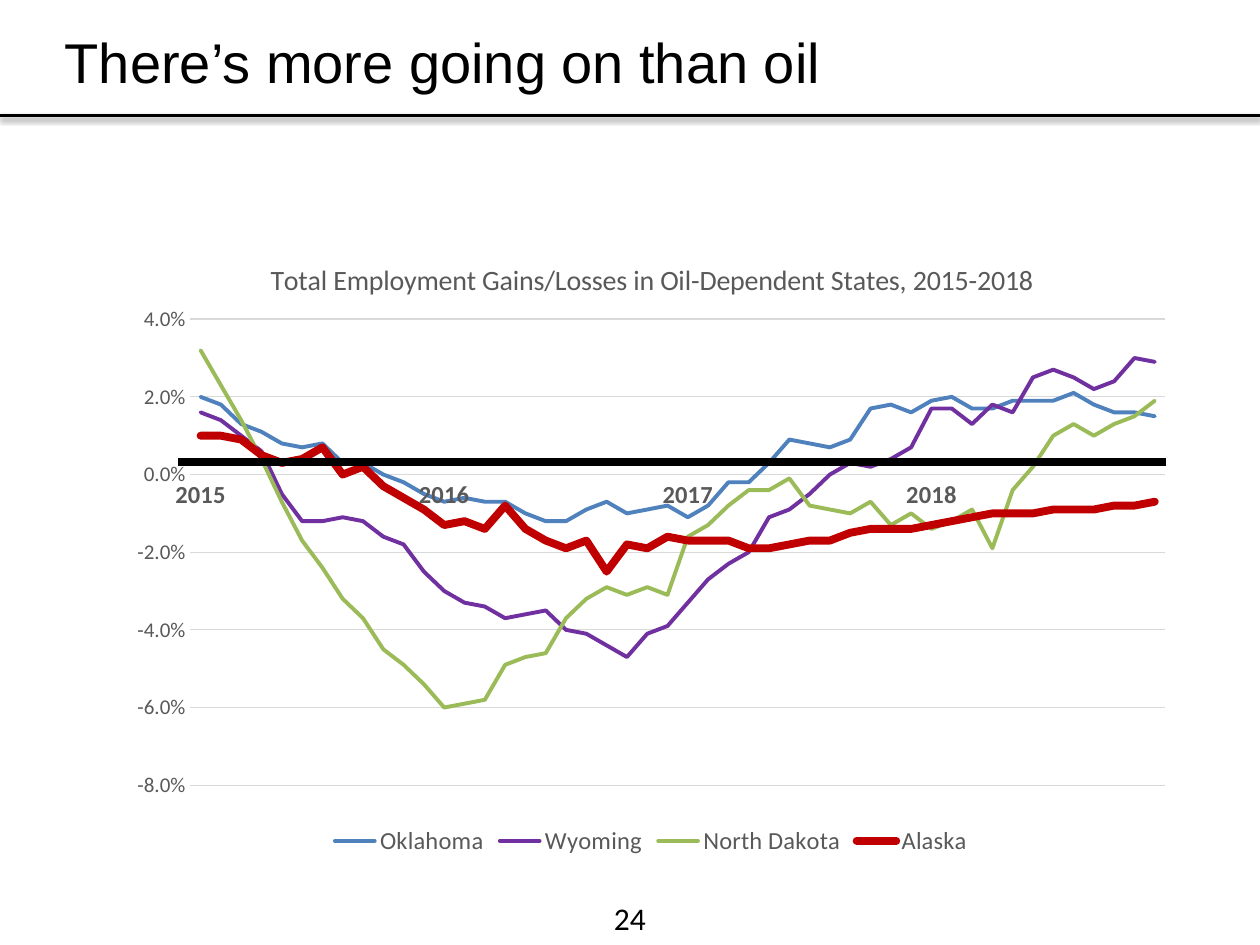
from dataclasses import dataclass

import lxml.etree
import pptx
import pptx.chart.data
import pptx.dml.color
import pptx.enum.chart
import pptx.enum.shapes
import pptx.enum.text
import pptx.oxml
import pptx.oxml.ns
import pptx.util

Pt = pptx.util.Pt
RGB = pptx.dml.color.RGBColor.from_string
qn = pptx.oxml.ns.qn


@dataclass(frozen=True)
class Theme:
    ink: str = "000000"
    label: str = "595959"
    grid: str = "D9D9D9"
    heading_font: str = "Arial"
    font: str = "Calibri"
    heading: float = 32
    page: float = 18
    chart_title: float = 16
    category: float = 14
    value: float = 12
    legend: float = 14


@dataclass(frozen=True)
class State:
    name: str
    color: str
    width: float
    tenths: list[int]  # tenths of a percent, by month


T = Theme()
YEARS = range(2015, 2019)
STATES = [
    State("Oklahoma", "4F81BD", 2.25, [
        20, 18, 13, 11, 8, 7, 8, 3, 3, 0, -2, -5,
        -7, -6, -7, -7, -10, -12, -12, -9, -7, -10, -9, -8,
        -11, -8, -2, -2, 3, 9, 8, 7, 9, 17, 18, 16,
        19, 20, 17, 17, 19, 19, 19, 21, 18, 16, 16, 15]),
    State("Wyoming", "7030A0", 2.25, [
        16, 14, 10, 6, -5, -12, -12, -11, -12, -16, -18, -25,
        -30, -33, -34, -37, -36, -35, -40, -41, -44, -47, -41, -39,
        -33, -27, -23, -20, -11, -9, -5, 0, 3, 2, 4, 7,
        17, 17, 13, 18, 16, 25, 27, 25, 22, 24, 30, 29]),
    State("North Dakota", "9BBB59", 2.25, [
        32, 23, 14, 4, -7, -17, -24, -32, -37, -45, -49, -54,
        -60, -59, -58, -49, -47, -46, -37, -32, -29, -31, -29, -31,
        -16, -13, -8, -4, -4, -1, -8, -9, -10, -7, -13, -10,
        -14, -12, -9, -19, -4, 2, 10, 13, 10, 13, 15, 19]),
    State("Alaska", "C00000", 4.5, [
        10, 10, 9, 5, 3, 4, 7, 0, 2, -3, -6, -9,
        -13, -12, -14, -8, -14, -17, -19, -17, -25, -18, -19, -16,
        -17, -17, -17, -19, -19, -18, -17, -17, -15, -14, -14, -14,
        -13, -12, -11, -10, -10, -10, -9, -9, -9, -8, -8, -7]),
]


def style_font(font, size: float, color: str, name: str = T.font, bold: bool = False) -> None:
    font.size, font.name, font.bold = Pt(size), name, bold
    font.color.rgb = RGB(color)


def add_text(s, text: str, *, x: float, y: float, w: float, h: float, size: float,
             font: str = T.font, color: str = T.ink,
             align=pptx.enum.text.PP_ALIGN.LEFT) -> None:
    tf = s.shapes.add_textbox(Pt(x), Pt(y), Pt(w), Pt(h)).text_frame
    tf.word_wrap = True
    p = tf.paragraphs[0]
    p.alignment = align
    r = p.add_run()
    r.text = text
    style_font(r.font, size, color, font)


def add_rule(s, x1: float, x2: float, y: float, width: float, shadow: bool = False) -> None:
    line = s.shapes.add_connector(pptx.enum.shapes.MSO_CONNECTOR.STRAIGHT,
                                  Pt(x1), Pt(y), Pt(x2), Pt(y))
    line.line.color.rgb = RGB(T.ink)
    line.line.width = Pt(width)
    effects = lxml.etree.SubElement(line._element.spPr, qn("a:effectLst"))
    if shadow:
        outer = lxml.etree.SubElement(effects, qn("a:outerShdw"), blurRad=str(Pt(3.1)),
                                      dist=str(Pt(1.8)), dir="5400000", rotWithShape="0")
        clr = lxml.etree.SubElement(outer, qn("a:srgbClr"), val=T.ink)
        lxml.etree.SubElement(clr, qn("a:alpha"), val="35000")


def set_layout(element, after: str, inner: bool = False, **fractions: float) -> None:
    """Place a chart part by fractions of the chart's size."""
    for old in element.findall(qn("c:layout")):
        element.remove(old)
    layout = lxml.etree.Element(qn("c:layout"))
    manual = lxml.etree.SubElement(layout, qn("c:manualLayout"))
    if inner:
        lxml.etree.SubElement(manual, qn("c:layoutTarget"), val="inner")
    for key in "xy":
        lxml.etree.SubElement(manual, qn(f"c:{key}Mode"), val="edge")
    for key, value in fractions.items():
        lxml.etree.SubElement(manual, qn(f"c:{key}"), val=str(value))
    previous = element.find(qn(after)) if after else None
    if previous is None:
        element.insert(0, layout)
    else:
        previous.addnext(layout)


def add_employment_chart(s, x: float, y: float, w: float, h: float) -> None:
    data = pptx.chart.data.CategoryChartData(number_format="0.0%")
    data.categories = [str(year) if month == 0 else "" for year in YEARS for month in range(12)]
    for state in STATES:
        data.add_series(state.name, [v / 1000 for v in state.tenths])
    chart = s.shapes.add_chart(pptx.enum.chart.XL_CHART_TYPE.LINE,
                               Pt(x), Pt(y), Pt(w), Pt(h), data).chart
    style_font(chart.font, 10, T.ink)

    # Title and legend
    tf = chart.chart_title.text_frame
    r = tf.paragraphs[0].add_run()
    r.text = "Total Employment Gains/Losses in Oil-Dependent States, 2015-2018"
    style_font(r.font, T.chart_title, T.label)
    set_layout(chart.chart_title._element, "c:tx", x=0.14, y=0.04)
    chart.has_legend = True
    chart.legend.position = pptx.enum.chart.XL_LEGEND_POSITION.BOTTOM
    chart.legend.include_in_layout = False
    style_font(chart.legend.font, T.legend, T.label)

    # Axes
    no_tick = pptx.enum.chart.XL_TICK_MARK.NONE
    cat, val = chart.category_axis, chart.value_axis
    for axis in (cat, val):
        axis.major_tick_mark = axis.minor_tick_mark = no_tick
    style_font(cat.tick_labels.font, T.category, T.label, bold=True)
    cat._element.txPr.find(qn("a:bodyPr")).set("rot", "-60000000")
    skip = lxml.etree.Element(qn("c:tickLblSkip"), val="1")
    cat._element.find(qn("c:noMultiLvlLbl")).addprevious(skip)
    style_font(val.tick_labels.font, T.value, T.label)
    val.tick_labels.number_format = "0.0%"
    val.tick_labels.number_format_is_linked = False
    val.minimum_scale, val.maximum_scale, val.major_unit = -0.08, 0.04, 0.02
    val.format.line.fill.background()
    for line in (cat.format.line, val.major_gridlines.format.line):
        line.color.rgb = RGB(T.grid)
        line.width = Pt(0.75)

    # Series
    plot = chart.plots[0]
    plot.vary_by_categories = False
    set_layout(chart._chartSpace.chart.plotArea, "", inner=True, x=0.07, y=0.14, w=0.91, h=0.74)
    for series, state in zip(plot.series, STATES):
        series.smooth = False
        series.marker.style = pptx.enum.chart.XL_MARKER_STYLE.NONE
        series.format.line.color.rgb = RGB(state.color)
        series.format.line.width = Pt(state.width)
        series.format.line._get_or_add_ln().set("cap", "rnd")


def main() -> None:
    prs = pptx.Presentation()
    prs.slide_width, prs.slide_height = Pt(720), Pt(540)
    s = prs.slides.add_slide(prs.slide_layouts[6])

    # Heading and its rule
    add_text(s, "There’s more going on than oil", x=30, y=12, w=648, h=440,
             size=T.heading, font=T.heading_font)
    add_rule(s, 0, 720, 66, 2, shadow=True)

    # Page number
    add_text(s, "24", x=0, y=510, w=720, h=29, size=T.page,
             align=pptx.enum.text.PP_ALIGN.CENTER)

    # Chart and the bar across it
    add_employment_chart(s, 66, 132, 612, 360)
    add_rule(s, 102, 666, 264, 5)

    prs.save("out.pptx")


if __name__ == "__main__":
    main()
